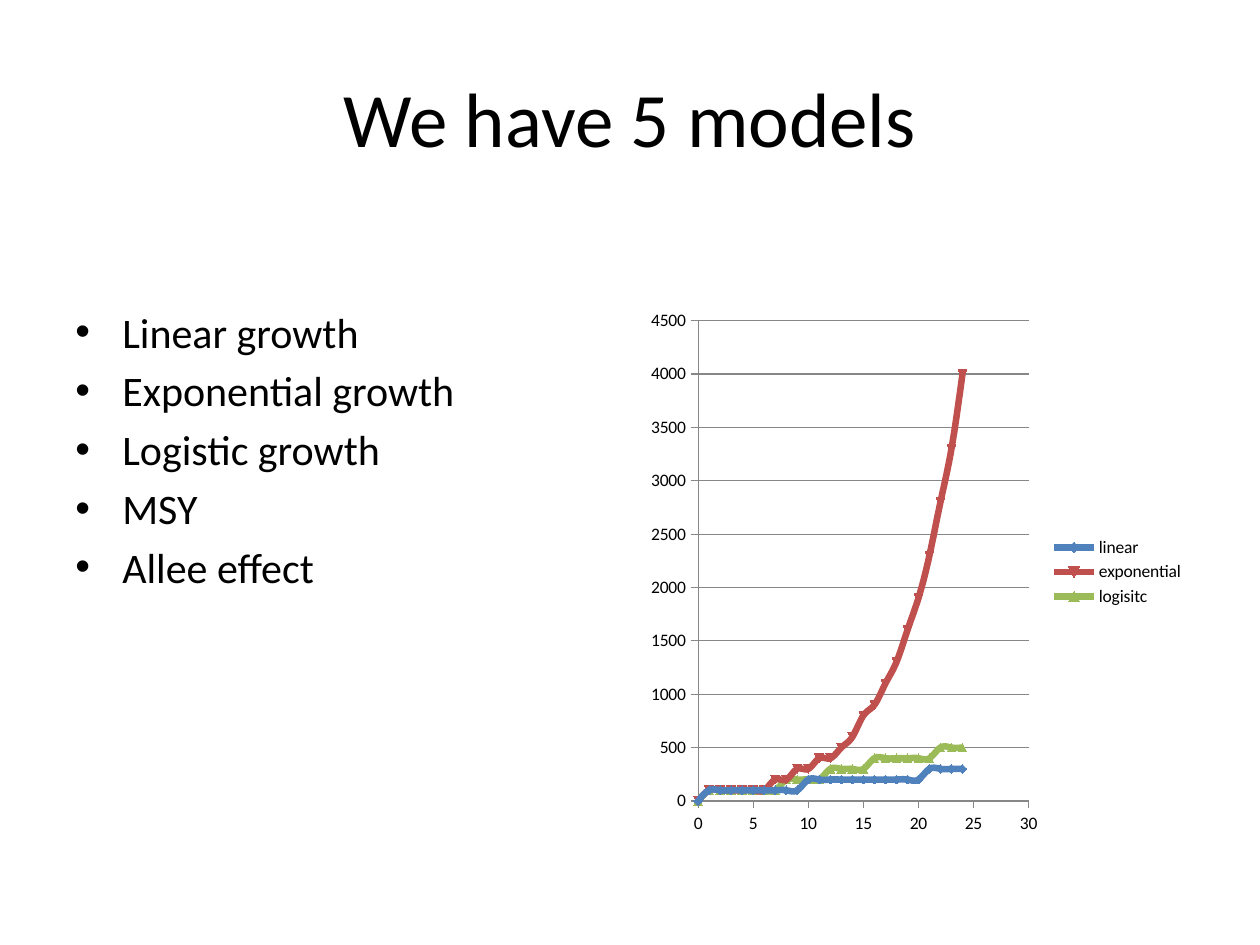
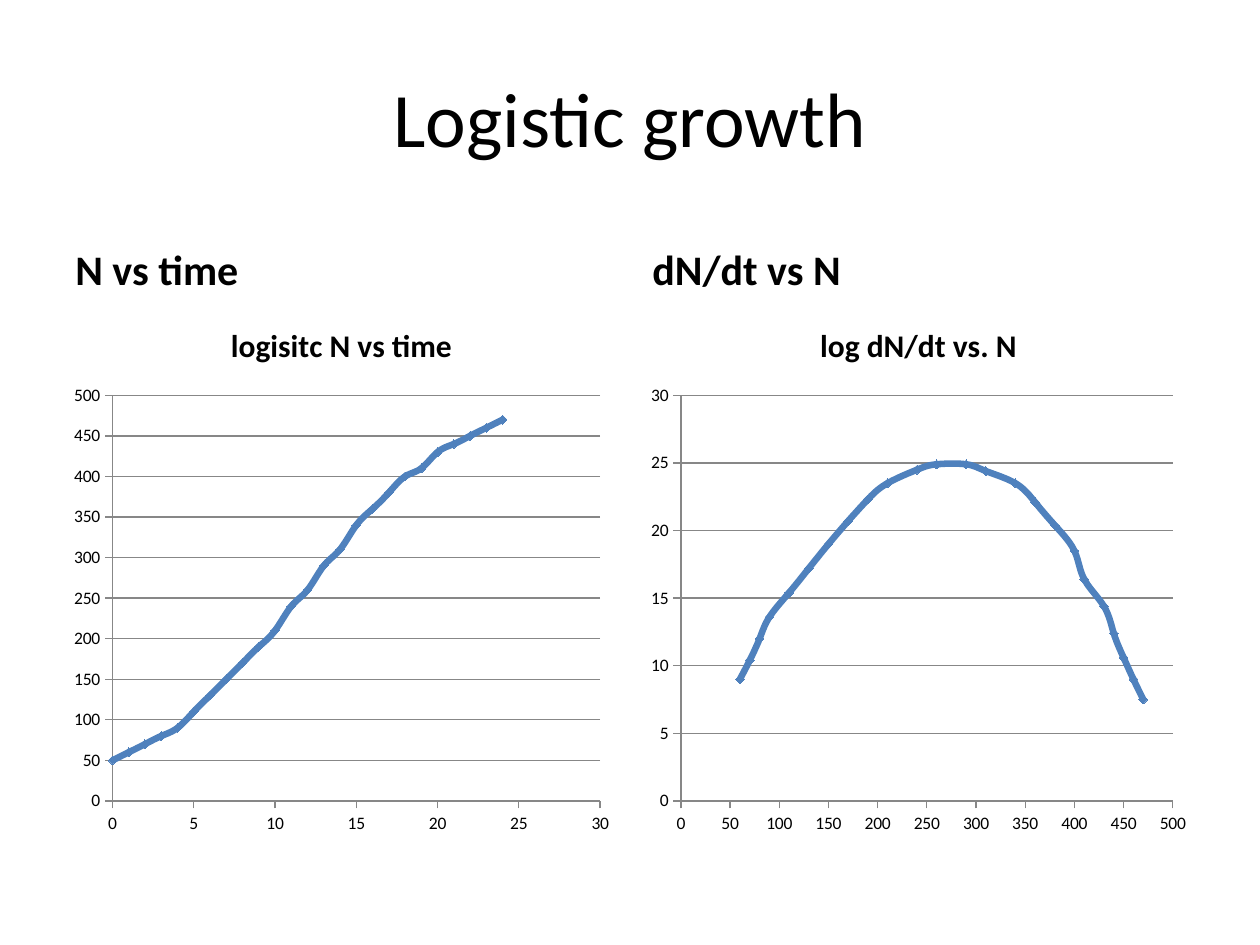
from dataclasses import dataclass

from lxml import etree
from pptx import Presentation
from pptx.chart.data import XyChartData
from pptx.dml.color import RGBColor
from pptx.enum.chart import XL_CHART_TYPE, XL_LEGEND_POSITION, XL_TICK_MARK
from pptx.enum.text import MSO_ANCHOR, PP_ALIGN
from pptx.oxml.ns import qn
from pptx.util import Pt

SMOOTH = XL_CHART_TYPE.XY_SCATTER_SMOOTH
LEGEND_RIGHT = XL_LEGEND_POSITION.RIGHT
TICK_OUT, TICK_NONE = XL_TICK_MARK.OUTSIDE, XL_TICK_MARK.NONE
TOP, MIDDLE, BOTTOM = MSO_ANCHOR.TOP, MSO_ANCHOR.MIDDLE, MSO_ANCHOR.BOTTOM
LEFT, CENTER = PP_ALIGN.LEFT, PP_ALIGN.CENTER


@dataclass(frozen=True)
class Theme:
    font: str = "Calibri"
    ink: str = "000000"
    paper: str = "FFFFFF"
    grid: str = "878787"
    curves: tuple = ("4F81BD", "C0504D", "9BBB59")
    title: float = 44
    body: float = 24
    chart_title: float = 18
    chart_text: float = 10
    curve_width: float = 3.75
    grid_width: float = 0.75
    paragraph_gap: float = 4.8


THEME = Theme()
EMU_PER_PX = 914400 / 126
SLIDE_SIZE = (1260, 945)
MARGIN, COLUMN_WIDTH = 63, 557
RIGHT_COLUMN = SLIDE_SIZE[0] - MARGIN - COLUMN_WIDTH
TITLE_BOX = (MARGIN, 38, SLIDE_SIZE[0] - 2 * MARGIN, 158)
COLUMNS = (MARGIN, RIGHT_COLUMN)
HEADING_TOP, HEADING_HEIGHT = 212, 88
CONTENT_TOP, CONTENT_HEIGHT = 300, 544
BULLET_INDENT = 47

START, STEP, RATE, CAPACITY = 50, 10, 0.2, 500
TIMES = range(25)


def logistic_sizes():
    sizes = [START]
    for _ in TIMES[1:]:
        size = sizes[-1]
        sizes.append(size + RATE * size * (1 - size / CAPACITY))
    return sizes


def rounded(sizes, digits):
    return [round(size, digits) for size in sizes]


LINEAR = [START + STEP * t for t in TIMES]
EXPONENTIAL = [START * (1 + RATE) ** t for t in TIMES]
LOGISTIC = logistic_sizes()
LOGISTIC_TENS = rounded(LOGISTIC, -1)
GROWTH = [None] + [
    round(after - before, 1) for before, after in zip(LOGISTIC, LOGISTIC[1:])
]

MODELS = {
    "title": "We have 5 models",
    "bullets": [
        "Linear growth",
        "Exponential growth",
        "Logistic growth",
        "MSY",
        "Allee effect",
    ],
    "chart": {
        "x": TIMES,
        "curves": {
            "linear": rounded(LINEAR, -2),
            "exponential": rounded(EXPONENTIAL, -2),
            "logisitc": rounded(LOGISTIC, -2),
        },
        "x_scale": (30, 5),
        "y_scale": (4500, 500),
    },
}
LOGISTIC_GROWTH = {
    "title": "Logistic growth",
    "columns": [
        {
            "heading": "N vs time",
            "title": "logisitc N vs time",
            "x": TIMES,
            "curves": {"Series 1": LOGISTIC_TENS},
            "x_scale": (30, 5),
            "y_scale": (500, 50),
        },
        {
            "heading": "dN/dt vs N",
            "title": "log dN/dt vs. N",
            "x": LOGISTIC_TENS,
            "curves": {"Series 1": GROWTH},
            "x_scale": (500, 50),
            "y_scale": (30, 5),
        },
    ],
}


def px(length):
    return round(length * EMU_PER_PX)


def style_font(font, size, bold=False):
    font.name = THEME.font
    font.size = Pt(size)
    font.bold = bold
    font.color.rgb = RGBColor.from_string(THEME.ink)


def style_line(line, color, width):
    line.color.rgb = RGBColor.from_string(color)
    line.width = Pt(width)


def add_bullet(paragraph):
    properties = paragraph._p.get_or_add_pPr()
    properties.set("marL", str(px(BULLET_INDENT)))
    properties.set("indent", str(-px(BULLET_INDENT)))
    etree.SubElement(properties, qn("a:buFont"), typeface="Arial")
    etree.SubElement(properties, qn("a:buChar"), char="•")


def add_text(slide, box, lines, size, anchor=TOP, align=LEFT, gap=0, bold=False, bullets=False):
    frame = slide.shapes.add_textbox(*map(px, box)).text_frame
    frame.word_wrap = True
    frame.vertical_anchor = anchor
    frame.text = "\n".join(lines)
    for paragraph in frame.paragraphs:
        paragraph.alignment = align
        paragraph.space_before = Pt(gap)
        if bullets:
            add_bullet(paragraph)
        for run in paragraph.runs:
            style_font(run.font, size, bold)


def style_axis(axis, scale):
    axis.minimum_scale = 0
    axis.maximum_scale, axis.major_unit = scale
    axis.major_tick_mark = TICK_OUT
    axis.minor_tick_mark = TICK_NONE
    style_line(axis.format.line, THEME.grid, THEME.grid_width)
    style_font(axis.tick_labels.font, THEME.chart_text)


def smooth_curve(curve):
    curve._element.find(qn("c:smooth")).set("val", "1")


def drop_missing_points(curve):
    for point in list(curve._element.iter(qn("c:pt"))):
        if point.findtext(qn("c:v")) == "None":
            point.getparent().remove(point)


def add_growth_chart(slide, left, content):
    data = XyChartData()
    for name, values in content["curves"].items():
        curve = data.add_series(name)
        for x, y in zip(content["x"], values):
            curve.add_data_point(x, y)
    box = (left, CONTENT_TOP, COLUMN_WIDTH, CONTENT_HEIGHT)
    chart = slide.shapes.add_chart(SMOOTH, *map(px, box), data).chart
    style_font(chart.font, THEME.chart_text)
    chart.plots[0].vary_by_categories = False
    for curve, color in zip(chart.plots[0].series, THEME.curves):
        smooth_curve(curve)
        drop_missing_points(curve)
        style_line(curve.format.line, color, THEME.curve_width)

    style_axis(chart.category_axis, content["x_scale"])
    style_axis(chart.value_axis, content["y_scale"])
    chart.category_axis.has_major_gridlines = False
    chart.value_axis.has_major_gridlines = True
    style_line(chart.value_axis.major_gridlines.format.line, THEME.grid, THEME.grid_width)

    chart.has_title = "title" in content
    if chart.has_title:
        title = chart.chart_title
        title.include_in_layout = False
        title.text_frame.text = content["title"]
        style_font(title.text_frame.paragraphs[0].runs[0].font, THEME.chart_title, bold=True)
    chart.has_legend = len(content["curves"]) > 1
    if chart.has_legend:
        chart.legend.position = LEGEND_RIGHT
        chart.legend.include_in_layout = False
        style_font(chart.legend.font, THEME.chart_text)


def add_titled_slide(deck, title):
    slide = deck.slides.add_slide(deck.slide_layouts[6])
    slide.background.fill.solid()
    slide.background.fill.fore_color.rgb = RGBColor.from_string(THEME.paper)
    add_text(slide, TITLE_BOX, [title], THEME.title, MIDDLE, CENTER)
    return slide


def build_models(deck):
    slide = add_titled_slide(deck, MODELS["title"])
    box = (MARGIN, CONTENT_TOP, COLUMN_WIDTH, CONTENT_HEIGHT)
    add_text(slide, box, MODELS["bullets"], THEME.body, gap=THEME.paragraph_gap, bullets=True)
    add_growth_chart(slide, RIGHT_COLUMN, MODELS["chart"])


def build_logistic_growth(deck):
    slide = add_titled_slide(deck, LOGISTIC_GROWTH["title"])
    for left, column in zip(COLUMNS, LOGISTIC_GROWTH["columns"]):
        box = (left, HEADING_TOP, COLUMN_WIDTH, HEADING_HEIGHT)
        add_text(slide, box, [column["heading"]], THEME.body, BOTTOM,
                 gap=THEME.paragraph_gap, bold=True)
        add_growth_chart(slide, left, column)


def main():
    deck = Presentation()
    deck.slide_width, deck.slide_height = map(px, SLIDE_SIZE)
    build_models(deck)
    build_logistic_growth(deck)
    deck.save("out.pptx")


if __name__ == "__main__":
    main()
